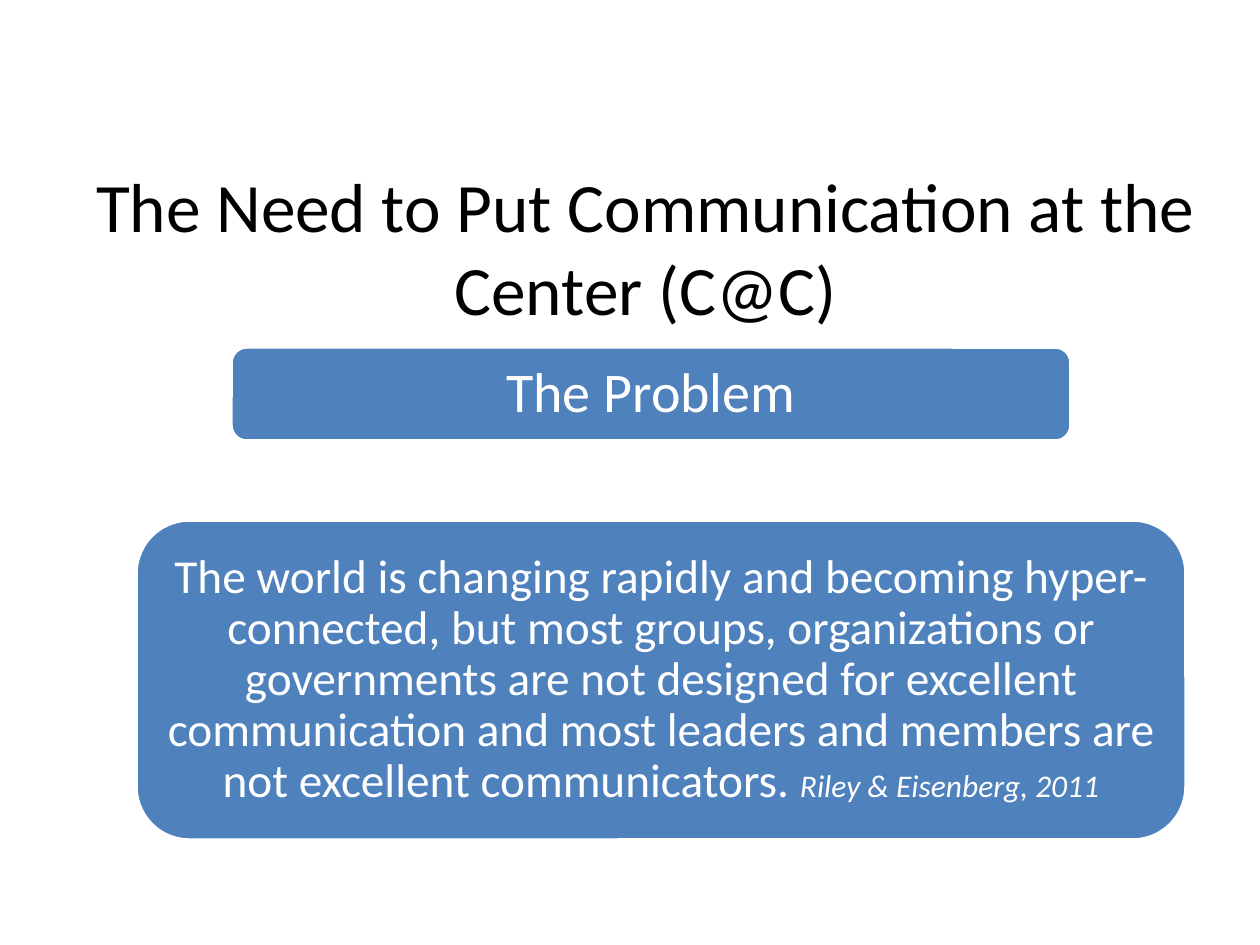
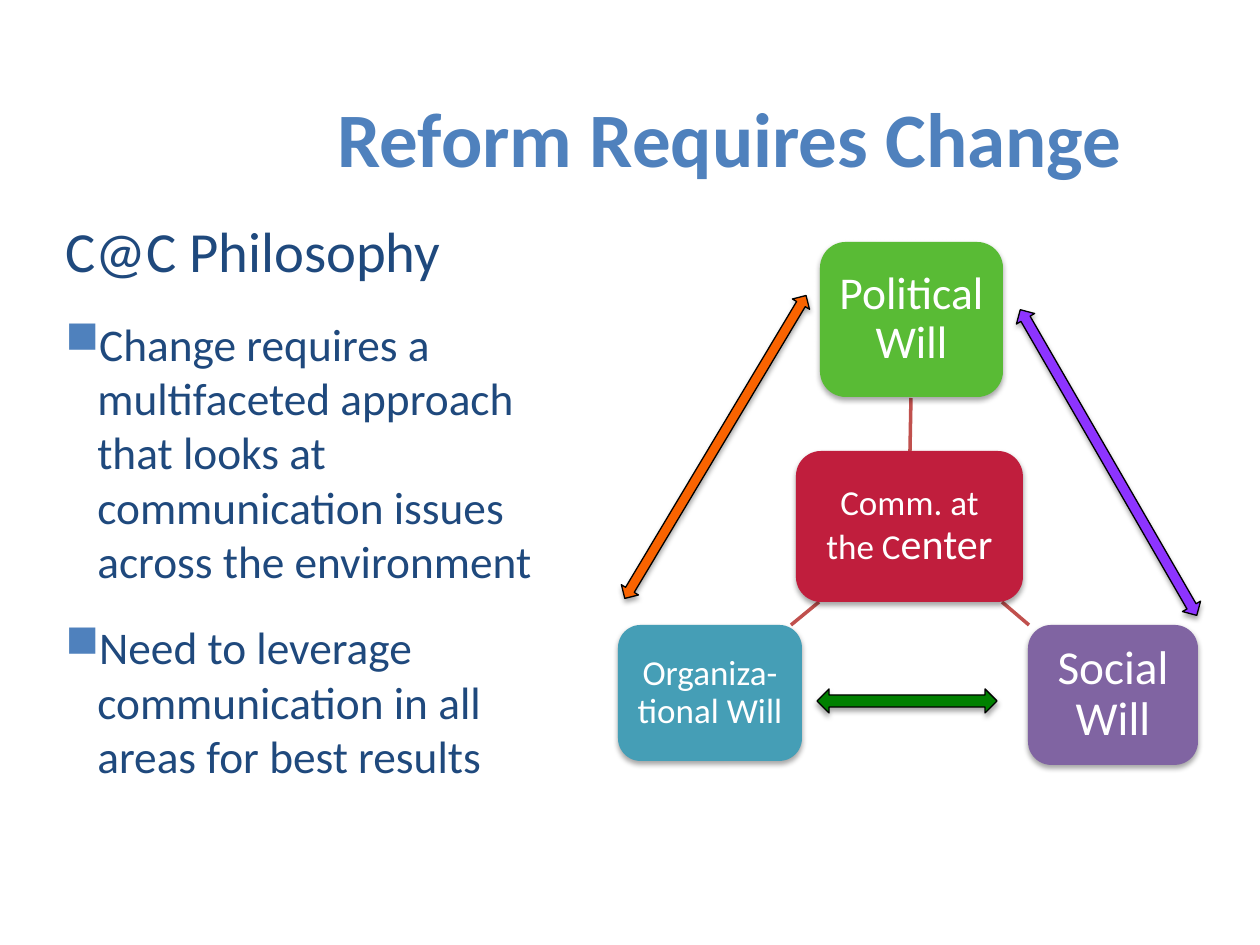
from lxml.etree import SubElement
from pptx import Presentation
from pptx.dml.color import RGBColor
from pptx.enum.shapes import MSO_CONNECTOR as CONN, MSO_SHAPE as SHAPE
from pptx.enum.text import MSO_ANCHOR as ANCHOR, PP_ALIGN as ALIGN
from pptx.oxml.ns import qn
from pptx.util import Emu, Pt

FONT = "Calibri"
BLUE, NAVY, WHITE, BLACK, RED = "4F81BD", "1F497D", "FFFFFF", "000000", "C0504D"
BULLET_INDENT = 32


def px(n):
    return Emu(round(n * 914400 / 126))


def color(value):
    return RGBColor.from_string(value)


def assign(target, values):
    for name, value in values.items():
        setattr(target, name, value)


def add_run(p, text, size, fill, **style):
    r = p.add_run()
    r.text = text
    assign(r.font, dict(name=FONT, size=Pt(size), **style))
    r.font.color.rgb = color(fill)


def set_frame(tf, anchor, inset=None):
    assign(tf, dict(word_wrap=True, vertical_anchor=anchor))
    if inset is not None:
        sides = ("left", "top", "right", "bottom")
        assign(tf, {f"margin_{side}": px(inset) for side in sides})


def add_text_box(s, box, anchor):
    tf = s.shapes.add_textbox(*map(px, box)).text_frame
    set_frame(tf, anchor)
    return tf


def add_title(s, box, text, size, fill, align, anchor, bold=False):
    p = add_text_box(s, box, anchor).paragraphs[0]
    p.alignment = align
    add_run(p, text, size, fill, bold=bold)


def set_bullet(p, char, fill):
    pPr = p._p.get_or_add_pPr()
    pPr.set("marL", str(px(BULLET_INDENT)))
    pPr.set("indent", str(-px(BULLET_INDENT)))
    SubElement(SubElement(pPr, qn("a:buClr")), qn("a:srgbClr"), val=fill)
    SubElement(pPr, qn("a:buChar"), char=char)


def add_philosophy(s, box, heading, points):
    tf = add_text_box(s, box, ANCHOR.TOP)
    add_run(tf.paragraphs[0], heading, 32.4, NAVY)
    for point in points:
        p = tf.add_paragraph()
        p.space_before = Pt(18)
        set_bullet(p, "■", BLUE)
        add_run(p, point, 25.9, NAVY)


def add_shadow(sp):
    effects = sp._element.spPr.find(qn("a:effectLst"))
    outer = SubElement(effects, qn("a:outerShdw"), blurRad=str(Pt(3.1)),
                       dist=str(Pt(1.8)), dir="5400000", rotWithShape="0")
    clr = SubElement(outer, qn("a:srgbClr"), val=BLACK)
    SubElement(clr, qn("a:alpha"), val="35000")


def add_filled(s, kind, box, fill, line=None, shadow=False):
    sp = s.shapes.add_shape(kind, *map(px, box))
    sp.fill.solid()
    sp.fill.fore_color.rgb = color(fill)
    if line:
        sp.line.color.rgb = color(line[0])
        sp.line.width = Pt(line[1])
    else:
        sp.line.fill.background()
    sp.shadow.inherit = False
    if shadow:
        add_shadow(sp)
    return sp


def add_card(s, box, fill, inset, runs, **look):
    tf = add_filled(s, SHAPE.ROUNDED_RECTANGLE, box, fill, **look).text_frame
    set_frame(tf, ANCHOR.MIDDLE, inset)
    p = tf.paragraphs[0]
    assign(p, dict(alignment=ALIGN.CENTER, line_spacing=0.9))
    for text, size, style in runs:
        add_run(p, text, size, WHITE, **style)


def add_link(s, ends):
    c = s.shapes.add_connector(CONN.STRAIGHT, *map(px, ends))
    c.line.color.rgb = color(RED)
    c.line.width = Pt(2)
    SubElement(c._element.spPr, qn("a:effectLst"))


def add_double_arrow(s, box, fill, angle):
    sp = add_filled(s, SHAPE.LEFT_RIGHT_ARROW, box, fill, (BLACK, 0.75), True)
    sp.rotation = angle


def build_problem(s):
    outline = (WHITE, 2)
    add_card(s, (136, 520, 1050, 320), BLUE, 14, [
        ("The world is changing rapidly and becoming hyper-connected, but most "
         "groups, organizations or governments are not designed for excellent "
         "communication and most leaders and members are not excellent "
         "communicators. ", 27, {}),
        ("Riley & Eisenberg, 2011", 18, dict(italic=True)),
    ], line=outline)
    add_card(s, (231, 347, 840, 94), BLUE, 16, [("The Problem", 32, {})],
             line=outline)
    add_title(s, (63, 168, 1165, 157),
              "The Need to Put Communication at the Center (C@C)",
              39.6, BLACK, ALIGN.CENTER, ANCHOR.MIDDLE)


def build_change(s):
    add_philosophy(s, (53, 210, 514, 602), "C@C Philosophy", [
        "Change requires a multifaceted approach that looks at communication "
        "issues across the environment",
        "Need to leverage communication in all areas for best results",
    ])
    add_title(s, (325, 32, 900, 157), "Reform Requires Change",
              44, BLUE, ALIGN.LEFT, ANCHOR.BOTTOM, bold=True)

    for ends in ((910, 451, 911, 398), (1002, 602, 1029, 625),
                 (819, 602, 791, 625)):
        add_link(s, ends)

    cards = [
        ((796, 451, 227, 151), "C01E3D", 14,
         [("Comm. at the C", 20, {}), ("enter", 24, {})]),
        ((820, 242, 183, 155), "59BB35", 8, [("Political Will", 26, {})]),
        ((1028, 625, 170, 140), "8064A2", 8, [("Social Will", 27, {})]),
        ((618, 625, 184, 136), "459EB6", 8, [("Organiza-tional Will", 20, {})]),
    ]
    for box, fill, inset, runs in cards:
        add_card(s, box, fill, inset, runs, shadow=True)

    for box, fill, angle in (((817, 689, 180, 24), "008000", 0),
                             ((539, 437, 353, 20), "F96300", 300.9),
                             ((932, 452, 353, 21), "8D34FF", 240)):
        add_double_arrow(s, box, fill, angle)


def main():
    prs = Presentation()
    assign(prs, dict(slide_width=px(1260), slide_height=px(945)))
    for build in (build_problem, build_change):
        build(prs.slides.add_slide(prs.slide_layouts[6]))
    prs.save("out.pptx")


if __name__ == "__main__":
    main()
